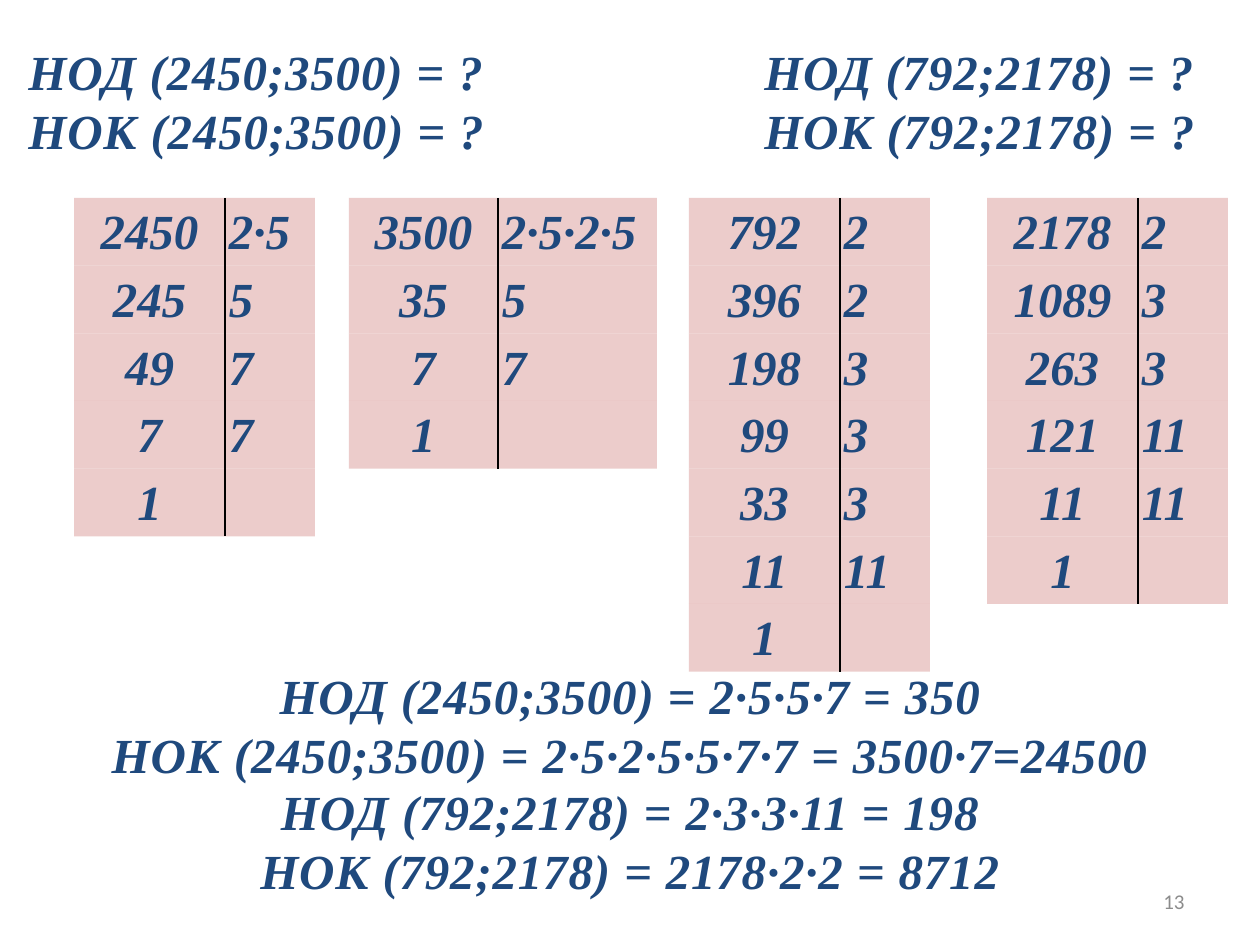
from dataclasses import dataclass

import pptx
import pptx.dml.color
import pptx.enum.text
import pptx.oxml
import pptx.oxml.ns
import pptx.util

PX_PER_INCH = 126
ROW_H = 67.6
TABLE_TOP = 198
INK = "1F497D"
PINK = "E6B9B8"
SERIF = "Times New Roman"
NO_STYLE_NO_GRID = "{2D5ABB26-0587-4C30-8999-92F81FD0307C}"
ALIGN = pptx.enum.text.PP_ALIGN
ANCHOR = pptx.enum.text.MSO_ANCHOR


@dataclass
class TextBlock:
    left: int
    top: int
    width: int
    lines: list[str]
    align: ALIGN


@dataclass
class Factorization:
    left: int
    widths: tuple[int, int]
    rows: list[tuple[str, str]]


BLOCKS = [
    TextBlock(16, 659, 1229, ["НОД (2450;3500) = 2∙5∙5∙7 = 350",
                              "НОК (2450;3500) = 2∙5∙2∙5∙5∙7∙7 = 3500∙7=24500"], ALIGN.CENTER),
    TextBlock(53, 775, 1155, ["НОД (792;2178) = 2∙3∙3∙11 = 198",
                              "НОК (792;2178) = 2178∙2∙2 = 8712"], ALIGN.CENTER),
    TextBlock(16, 35, 554, ["НОД (2450;3500) = ?", "НОК (2450;3500) = ?"], ALIGN.LEFT),
    TextBlock(752, 35, 476, ["НОД (792;2178) = ?", "НОК (792;2178) = ?"], ALIGN.LEFT),
]

FACTORIZATIONS = [
    Factorization(74, (151, 90), [("2450", "2·5"), ("245", "5"), ("49", "7"), ("7", "7"),
                                  ("1", "")]),
    Factorization(349, (149, 159), [("3500", "2·5·2·5"), ("35", "5"), ("7", "7"), ("1", "")]),
    Factorization(689, (151, 90), [("792", "2"), ("396", "2"), ("198", "3"), ("99", "3"),
                                   ("33", "3"), ("11", "11"), ("1", "")]),
    Factorization(987, (151, 90), [("2178", "2"), ("1089", "3"), ("263", "3"), ("121", "11"),
                                   ("11", "11"), ("1", "")]),
]


def px(n: float) -> pptx.util.Emu:
    return pptx.util.Emu(round(n * 914400 / PX_PER_INCH))


def rgb(value: str) -> pptx.dml.color.RGBColor:
    return pptx.dml.color.RGBColor.from_string(value)


def format_font(font, size: int, name: str, color: str, emphasis: bool) -> None:
    font.size = pptx.util.Pt(size)
    font.name = name
    font.color.rgb = rgb(color)
    font.bold = font.italic = emphasis


def add_block(s, block: TextBlock) -> None:
    box = s.shapes.add_textbox(px(block.left), px(block.top), px(block.width), px(131))
    tf = box.text_frame
    tf.word_wrap = True
    tf.auto_size = pptx.enum.text.MSO_AUTO_SIZE.SHAPE_TO_FIT_TEXT
    tf.text = "\n".join(block.lines)
    for p in tf.paragraphs:
        p.alignment = block.align
        for r in p.runs:
            format_font(r.font, 28, SERIF, INK, True)
            r.font._element.set("spc", "50")


def style_cell(cell, text: str, align: ALIGN, divider: str) -> None:
    """Fill one cell; divider names the border that carries the vertical rule."""
    cell.margin_left = cell.margin_right = px(4)
    cell.margin_top = cell.margin_bottom = 0
    cell.text = text
    p = cell.text_frame.paragraphs[0]
    p.alignment = align
    p.line_spacing = 1.15
    for r in p.runs:
        format_font(r.font, 28, SERIF, INK, True)

    cell.fill.solid()
    cell.fill.fore_color.rgb = rgb(PINK)
    tc_pr = cell._tc.get_or_add_tcPr()
    color = tc_pr.find(".//" + pptx.oxml.ns.qn("a:srgbClr"))
    color.append(pptx.oxml.parse_xml(f'<a:alpha {pptx.oxml.ns.nsdecls("a")} val="72000"/>'))
    tc_pr.insert(0, pptx.oxml.parse_xml(
        f'<a:{divider} {pptx.oxml.ns.nsdecls("a")} w="12700">'
        f'<a:solidFill><a:srgbClr val="000000"/></a:solidFill></a:{divider}>'))


def add_factorization(s, item: Factorization) -> None:
    count = len(item.rows)
    frame = s.shapes.add_table(count, 2, px(item.left), px(TABLE_TOP),
                               px(sum(item.widths)), px(ROW_H * count))
    table = frame.table
    table.first_row = table.horz_banding = False
    table._tbl.tblPr.find(pptx.oxml.ns.qn("a:tableStyleId")).text = NO_STYLE_NO_GRID
    for column, width in zip(table.columns, item.widths):
        column.width = px(width)
    for i, (number, factor) in enumerate(item.rows):
        style_cell(table.cell(i, 0), number, ALIGN.CENTER, "lnR")
        style_cell(table.cell(i, 1), factor, ALIGN.LEFT, "lnL")


def add_slide_number(s, number: str) -> None:
    tf = s.shapes.add_textbox(px(903), px(876), px(294), px(50)).text_frame
    tf.word_wrap = True
    tf.vertical_anchor = ANCHOR.MIDDLE
    tf.text = number
    p = tf.paragraphs[0]
    p.alignment = ALIGN.RIGHT
    format_font(p.runs[0].font, 12, "Calibri", "8C8C8C", False)


def main() -> None:
    prs = pptx.Presentation()
    prs.slide_width, prs.slide_height = px(1260), px(945)
    s = prs.slides.add_slide(prs.slide_layouts[6])
    answers, questions = BLOCKS[:2], BLOCKS[2:]
    for block in answers:
        add_block(s, block)
    for item in FACTORIZATIONS:
        add_factorization(s, item)
    for block in questions:
        add_block(s, block)
    add_slide_number(s, "13")
    prs.save("out.pptx")


if __name__ == "__main__":
    main()
